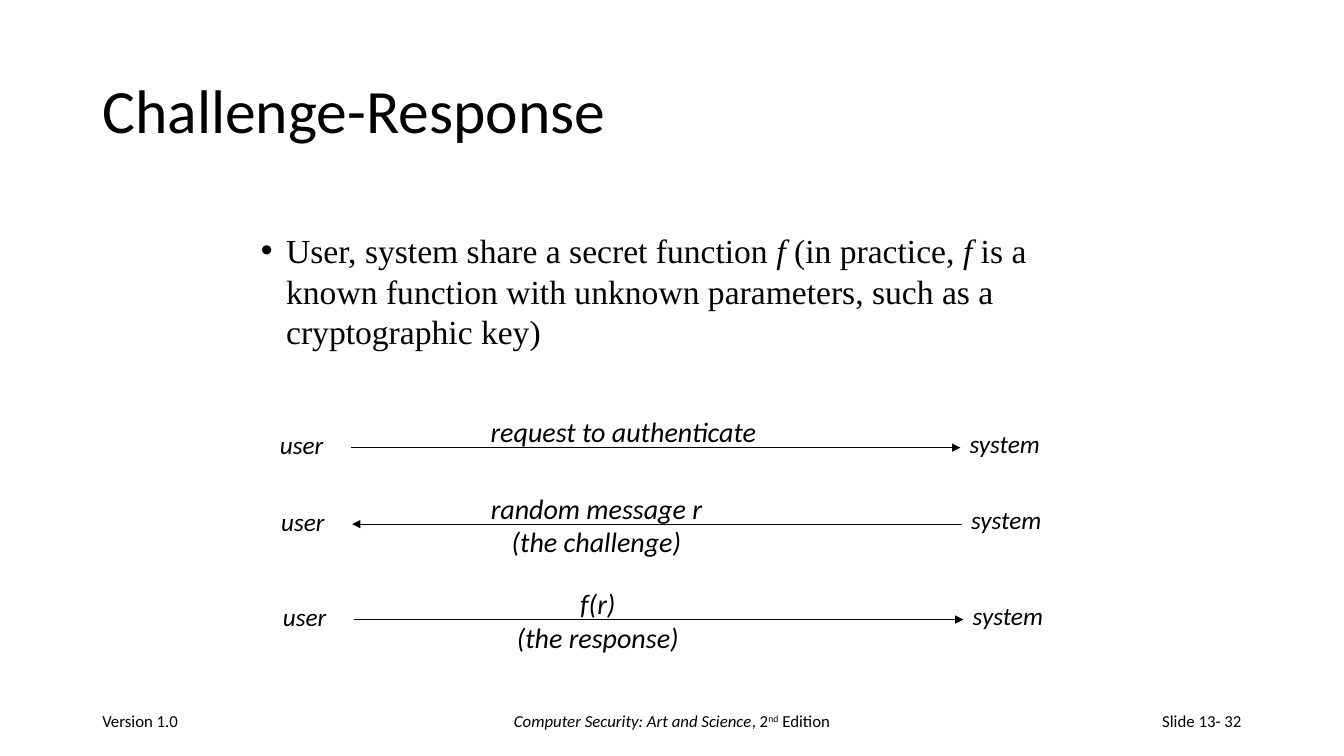
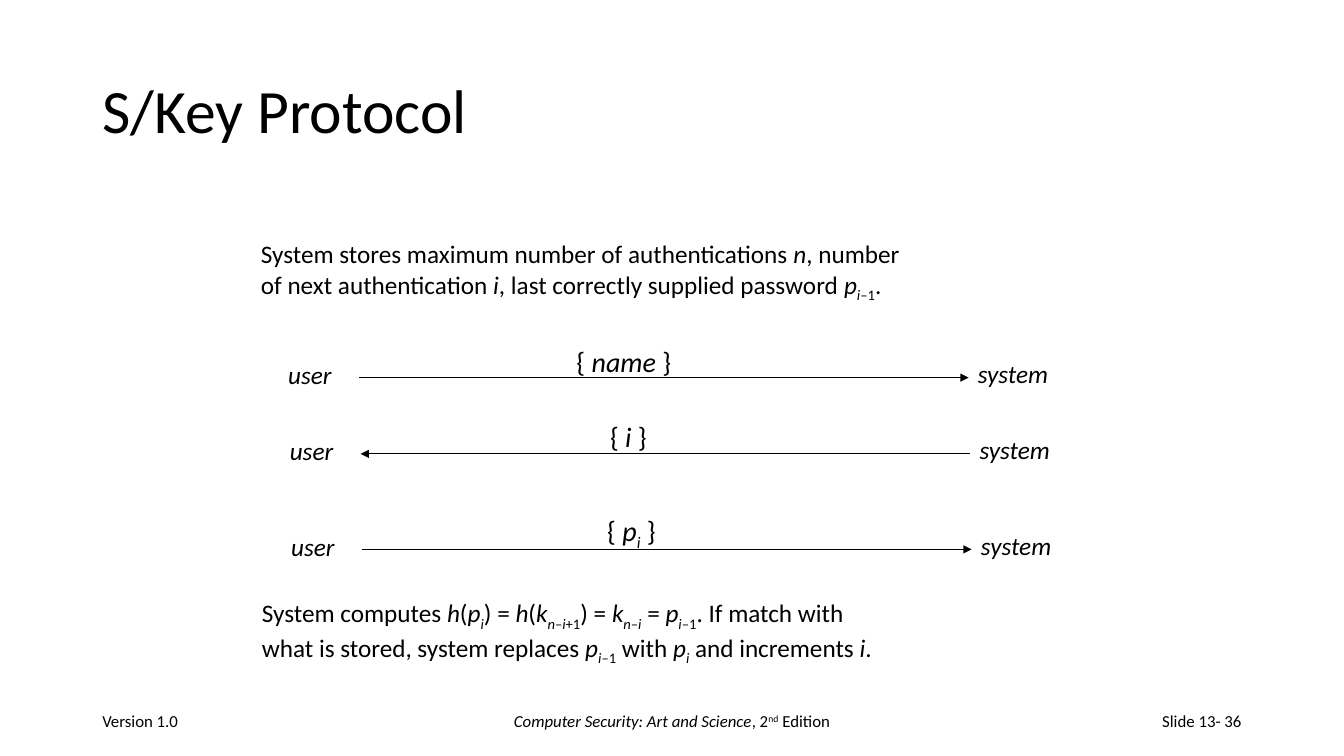
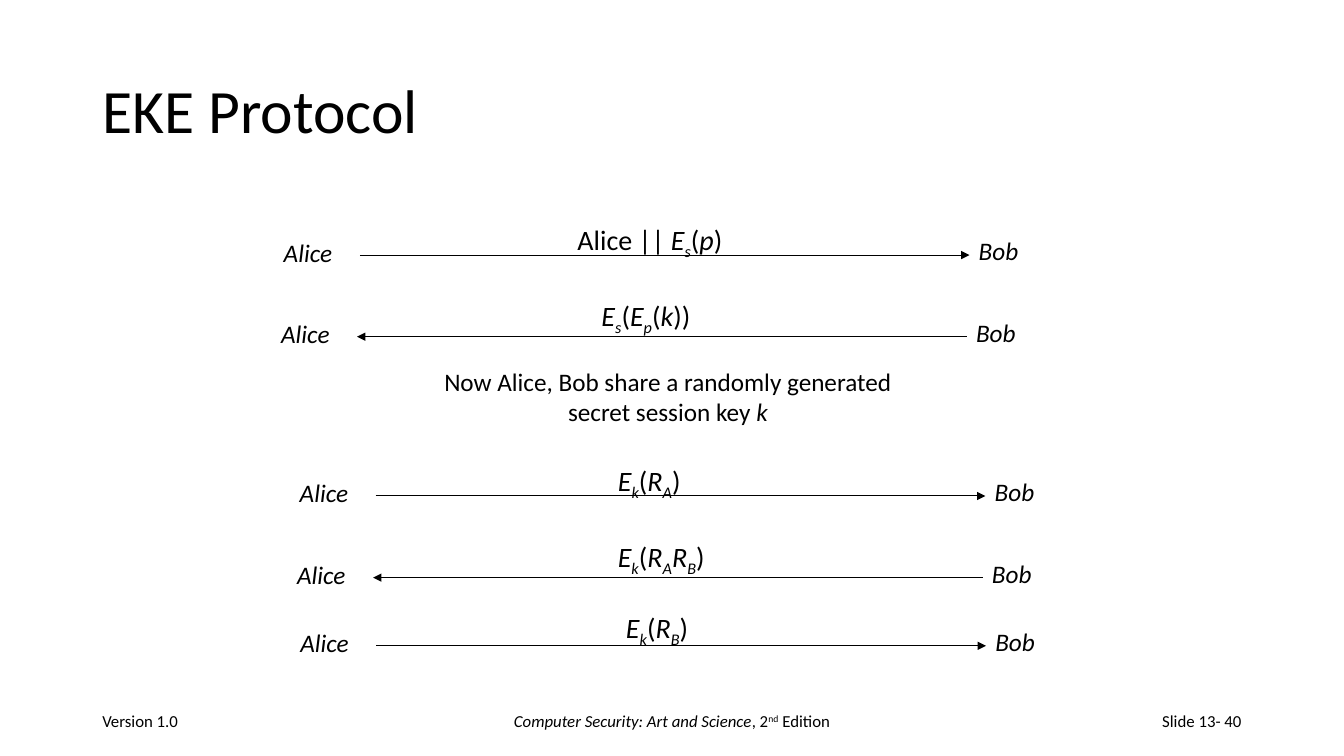
from dataclasses import dataclass

from lxml.etree import SubElement
from pptx import Presentation
from pptx.dml.color import RGBColor
from pptx.enum.shapes import MSO_CONNECTOR as Connector
from pptx.enum.text import MSO_ANCHOR as Anchor, MSO_AUTO_SIZE as AutoSize, PP_ALIGN as Align
from pptx.oxml.ns import qn
from pptx.slide import Slide
from pptx.text.text import TextFrame
from pptx.util import Pt

BLACK = "000000"
FONT = "Calibri"
SERIF = "Times New Roman"
ARROW_LENGTH = 435.5
NAME_GAP = 11.7
INDENT = 18
BASELINES = {"~": "-25000", "^": "30000"}


@dataclass(frozen=True)
class Party:
    """Name at one end of the arrows."""
    name: str
    width: float


@dataclass(frozen=True)
class Message:
    """Arrow with its label; x and y give the arrow's left end."""
    label: str
    x: float
    y: float
    label_x: float
    label_width: float
    lift: float = 27
    forward: bool = True
    align: Align = Align.LEFT


@dataclass(frozen=True)
class Note:
    """Free text beside the arrows."""
    text: str
    x: float
    y: float
    width: float
    height: float = 51
    align: Align = Align.LEFT
    size: float = 18
    font: str = FONT
    spacing: Pt | None = None
    bullet: bool = False


@dataclass(frozen=True)
class Page:
    """Content of one slide."""
    number: int
    title: str
    left: Party
    right: Party
    messages: tuple[Message, ...]
    notes: tuple[Note, ...]


USER, SYSTEM = Party("user", 46), Party("system", 65.5)
ALICE, BOB = Party("Alice", 49.7), Party("Bob", 43)

PAGES = (
    Page(32, "Challenge-Response", USER, SYSTEM, (
        Message("*request to authenticate*", 250.5, 319.7, 343.4, 206),
        Message("*random message r\n(the challenge)*", 251.5, 374.4, 342.9, 166.3,
                forward=False, align=Align.CENTER),
        Message("*f(r)\n(the response)*", 252.7, 442.6, 361.5, 131, align=Align.CENTER),
    ), (
        Note("User, system share a secret function *f* (in practice, *f* is a\n"
             "known function with unknown parameters, such as a\n"
             "cryptographic key)", 179.3, 160.6, 566, 94.3,
             size=24, font=SERIF, spacing=Pt(29), bullet=True),
    )),
    Page(36, "S/Key Protocol", USER, SYSTEM, (
        Message("{ *name *}", 256.4, 269.8, 404.7, 82.8),
        Message("{ *i* }", 257.6, 324.2, 428.4, 41, 28, False, Align.CENTER),
        Message("{ *p~i~* }", 258.6, 392.4, 426.2, 49.7, 29.5, align=Align.CENTER),
    ), (
        Note("System stores maximum number of authentications *n*, number\n"
             "of next authentication *i*, last correctly supplied password *p~i*–1~.",
             179.3, 167, 476),
        Note("System computes *h*(*p~i~*) = *h*(*k~n*–*i*+1~) = *k~n*–*i~* = *p~i*–1~. "
             "If match with\n"
             "what is stored, system replaces *p~i*–1~ with *p~i~* and increments *i*.",
             180, 423.4, 457),
    )),
    Page(40, "EKE Protocol", ALICE, BOB, (
        Message("Alice || *E~s~*(*p*)", 257, 182.2, 405.4, 120.2),
        Message("*E~s~*(*E~p~*(*k*))", 255.1, 240.5, 422.6, 80, 30.5, False),
        Message("*E~k~*(*R~A~*)", 268.4, 354.3, 434.2, 62),
        Message("*E~k~*(*R~A~R~B~*)", 266.5, 412.6, 434.2, 80, 30.5, False),
        Message("*E~k~*(*R~B~*)", 268.8, 461.3, 440, 61.2, 29),
    ), (
        Note("Now Alice, Bob share a randomly generated\nsecret session key *k*",
             308.2, 257.8, 337.7, align=Align.CENTER),
    )),
)


def rgb(value: str) -> RGBColor:
    """Turn a hex string into a colour."""
    return RGBColor.from_string(value)


def split_runs(text: str) -> list[list[tuple[str, bool, str]]]:
    """Split marked text into paragraphs of runs: * italic, ~ subscript, ^ superscript."""
    lines, chunk, italic, base = [[]], "", False, ""
    for char in text + "\n":
        if char not in "*~^\n":
            chunk += char
            continue
        if chunk:
            lines[-1].append((chunk, italic, base))
            chunk = ""
        if char == "\n":
            lines.append([])
        elif char == "*":
            italic = not italic
        else:
            base = "" if base else BASELINES[char]
    return lines[:-1]


def write(tf: TextFrame, text: str, *, size: float = 18, font: str = FONT,
          color: str = BLACK, align: Align = Align.LEFT, anchor: Anchor = Anchor.TOP,
          spacing: float | Pt | None = None, wrap: bool = False,
          bullet: bool = False) -> None:
    """Fill a text frame with marked text in the given format."""
    tf.word_wrap = wrap
    tf.auto_size = AutoSize.NONE if wrap else AutoSize.SHAPE_TO_FIT_TEXT
    tf.vertical_anchor = anchor
    for i, runs in enumerate(split_runs(text)):
        p = tf.add_paragraph() if i else tf.paragraphs[0]
        p.alignment = align
        p.line_spacing = spacing
        if bullet:
            ppr = p._p.get_or_add_pPr()
            ppr.set("marL", str(Pt(INDENT)))
            ppr.set("indent", str(0 if i else -Pt(INDENT)))
            if not i:
                SubElement(ppr, qn("a:buFont"), typeface="Arial")
                SubElement(ppr, qn("a:buChar"), char="•")
        for content, italic, base in runs:
            r = p.add_run()
            r.text = content
            r.font.size, r.font.name, r.font.italic = Pt(size), font, italic
            r.font.color.rgb = rgb(color)
            if base:
                r.font._element.set("baseline", base)


def add_text(s: Slide, text: str, x: float, y: float, w: float, h: float, **fmt) -> None:
    """Add a text box."""
    sp = s.shapes.add_textbox(Pt(x), Pt(y), Pt(w), Pt(h))
    write(sp.text_frame, text, **fmt)


def add_arrow(s: Slide, x: float, y: float, forward: bool) -> None:
    """Add a level arrow that points right when forward, otherwise left."""
    sp = s.shapes.add_connector(Connector.STRAIGHT, Pt(x), Pt(y), Pt(x + ARROW_LENGTH), Pt(y))
    sp.line.color.rgb = rgb(BLACK)
    sp.line.width = Pt(0.75)
    SubElement(sp.line._get_or_add_ln(), qn("a:tailEnd" if forward else "a:headEnd"),
               type="triangle")
    SubElement(sp._element.spPr, qn("a:effectLst"))


def add_message(s: Slide, m: Message, left: Party, right: Party) -> None:
    """Add an arrow with its label and the two names."""
    add_text(s, f"*{left.name}*", m.x - left.width - NAME_GAP, m.y - 16.6, left.width, 29)
    add_text(s, f"*{right.name}*", m.x + ARROW_LENGTH - 0.5, m.y - 17.4, right.width, 29)
    add_arrow(s, m.x, m.y, m.forward)
    height = 7.5 + 24 * (m.label.count("\n") + 1)
    add_text(s, m.label, m.label_x, m.y - m.lift, m.label_width, height,
             size=20, align=m.align)


def add_title(s: Slide, text: str) -> None:
    """Place and fill the title placeholder."""
    sp = s.shapes.title
    sp.left, sp.top, sp.width, sp.height = Pt(66), Pt(28.8), Pt(828), Pt(104.4)
    write(sp.text_frame, text, size=44, anchor=Anchor.MIDDLE, spacing=0.9, wrap=True)


def add_footer(s: Slide, number: int) -> None:
    """Add the three footer texts."""
    for text, x, w, align in (
        ("Version 1.0", 66, 216, Align.LEFT),
        ("*Computer Security: Art and Science*, 2^nd^ Edition", 318, 324, Align.CENTER),
        (f"Slide 13- {number}", 678, 216, Align.RIGHT),
    ):
        add_text(s, text, x, 500.5, w, 28.8, size=12, align=align,
                 anchor=Anchor.MIDDLE, wrap=True)


def add_page(prs: Presentation, page: Page) -> None:
    """Build one slide."""
    s = prs.slides.add_slide(prs.slide_layouts[5])
    add_title(s, page.title)
    for n in page.notes:
        add_text(s, n.text, n.x, n.y, n.width, n.height, size=n.size, font=n.font,
                 align=n.align, spacing=n.spacing, bullet=n.bullet)
    for m in page.messages:
        add_message(s, m, page.left, page.right)
    add_footer(s, page.number)


def main() -> None:
    """Build and save the slides."""
    prs = Presentation()
    prs.slide_width, prs.slide_height = Pt(960), Pt(540)
    for page in PAGES:
        add_page(prs, page)
    prs.save("out.pptx")


if __name__ == "__main__":
    main()
